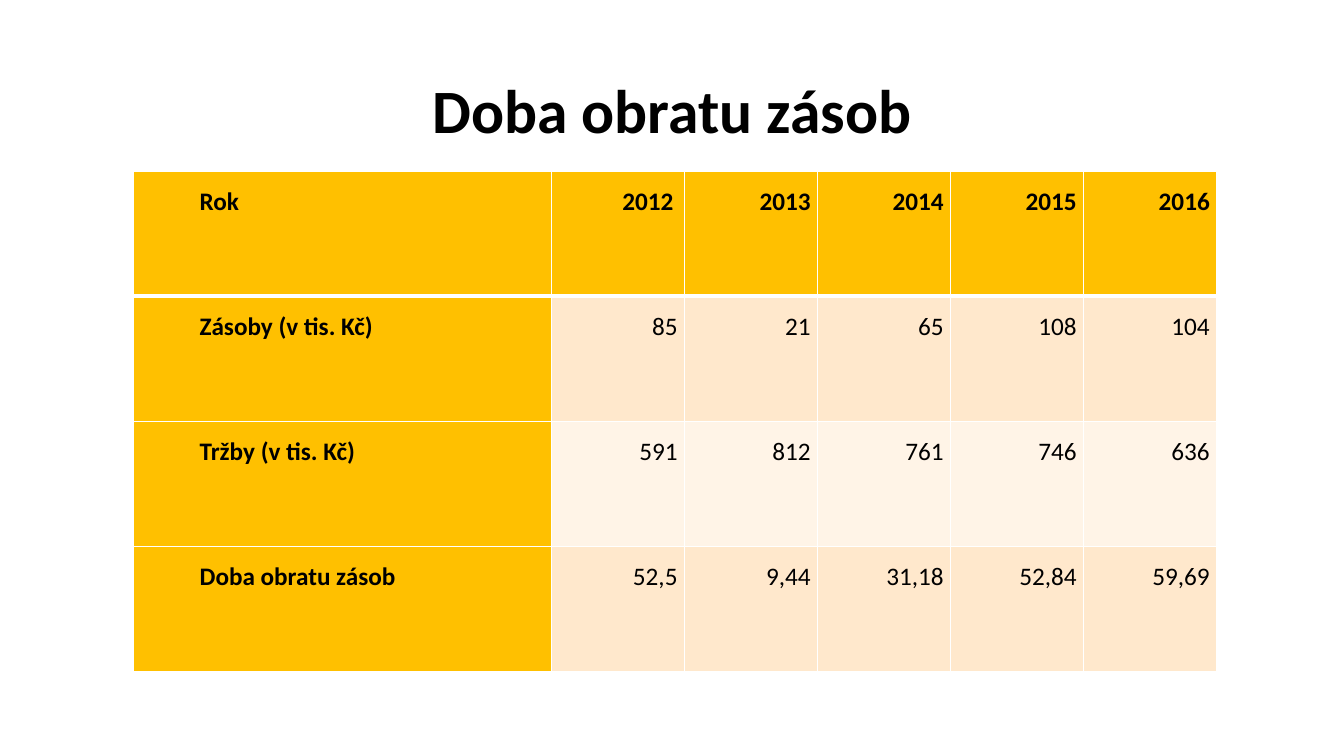
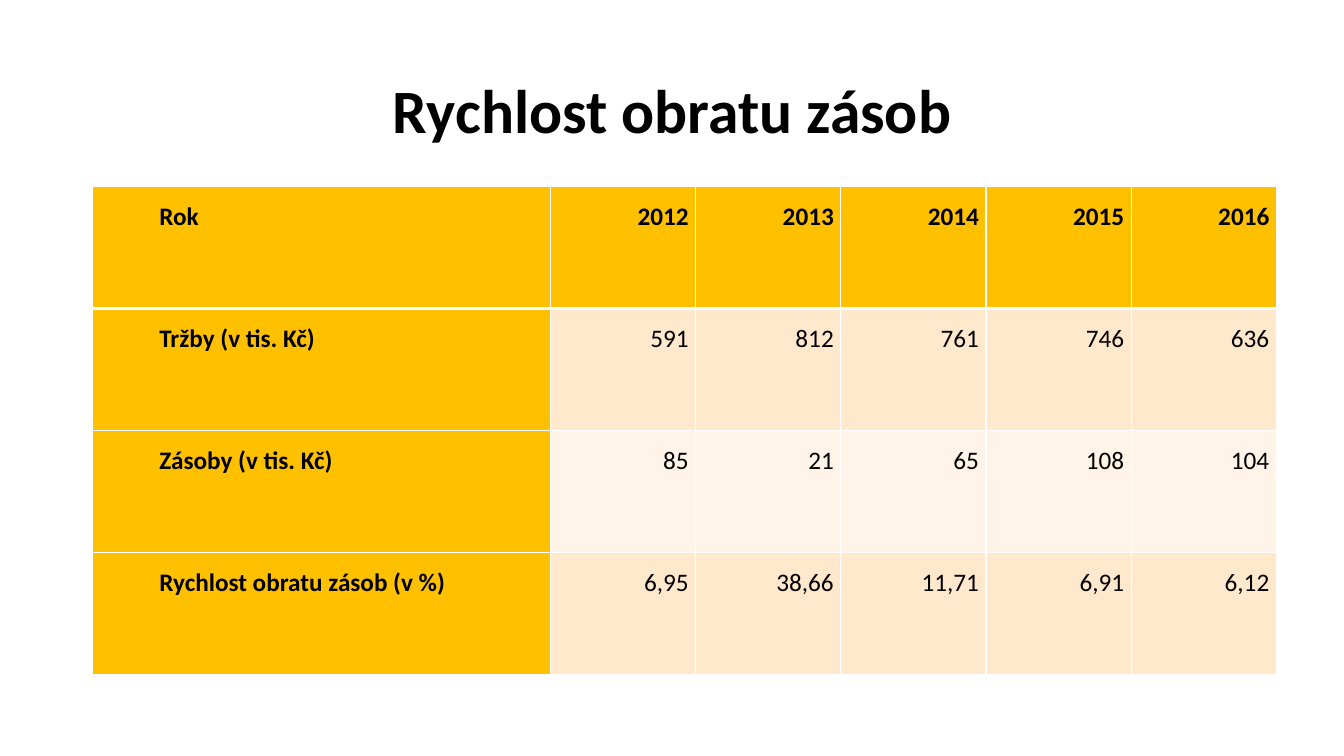
from lxml import etree
from pptx import Presentation
from pptx import util as u
from pptx.dml.color import RGBColor
from pptx.enum import text
from pptx.oxml import ns

LEFT, CENTER, RIGHT = text.PP_ALIGN.LEFT, text.PP_ALIGN.CENTER, text.PP_ALIGN.RIGHT
YEARS = ["Rok", "2012", "2013", "2014", "2015", "2016"]
STOCK = ["Zásoby (v tis. Kč)", "85", "21", "65", "108", "104"]
SALES = ["Tržby (v tis. Kč)", "591", "812", "761", "746", "636"]
TURNOVER_DAYS = ["Doba obratu zásob", "52,5", "9,44", "31,18", "52,84", "59,69"]
TURNOVER_RATE = ["Rychlost obratu zásob (v %)", "6,95", "38,66", "11,71", "6,91", "6,12"]


def rgb(value):
    return RGBColor.from_string(value)


class Deck:
    FONT = "Calibri"
    INK = "000000"
    GRID = "FFFFFF"
    HEAD = "FFC000"
    BANDS = ("FFF4E7", "FFE8CC")

    def __init__(self):
        self.prs = Presentation()
        self.prs.slide_width = u.Inches(13.33)
        self.prs.slide_height = u.Inches(7.5)
        self.s = None

    def slide(self, title):
        self.s = self.prs.slides.add_slide(self.prs.slide_layouts[5])
        sp = self.s.shapes.title
        sp.left, sp.top = u.Inches(0.92), u.Inches(0.4)
        sp.width, sp.height = u.Inches(11.5), u.Inches(1.45)
        tf = sp.text_frame
        tf.word_wrap = True
        tf.auto_size = text.MSO_AUTO_SIZE.NONE
        tf.vertical_anchor = text.MSO_ANCHOR.MIDDLE
        self.paragraph(tf, title, 44, True, CENTER, 0.9)

    def paragraph(self, tf, words, size, bold, align, spacing):
        p = tf.paragraphs[0]
        p.alignment = align
        p.line_spacing = spacing
        r = p.add_run()
        r.text = words
        r.font.name = self.FONT
        r.font.size = u.Pt(size)
        r.font.bold = bold
        r.font.color.rgb = rgb(self.INK)
        return p

    def borders(self, cell, top, bottom):
        tc_pr = cell._tc.get_or_add_tcPr()
        sides = (("lnL", 1), ("lnR", 1), ("lnT", top), ("lnB", bottom))
        for i, (side, width) in enumerate(sides):
            ln = etree.Element(ns.qn(f"a:{side}"), w=str(u.Pt(width)))
            fill = etree.SubElement(ln, ns.qn("a:solidFill"))
            etree.SubElement(fill, ns.qn("a:srgbClr"), val=self.GRID)
            tc_pr.insert(i, ln)

    def cell(self, cell, words, row, col, align):
        head = row == 0 or col == 0
        cell.margin_left = cell.margin_right = u.Inches(0.07)
        cell.margin_top = cell.margin_bottom = 0
        cell.fill.solid()
        cell.fill.fore_color.rgb = rgb(self.HEAD if head else self.BANDS[row % 2])
        self.borders(cell, 3 if row == 1 else 1, 3 if row == 0 else 1)
        p = self.paragraph(cell.text_frame, words, 18, head, align, 1.5)
        p_pr = p._p.get_or_add_pPr()
        p_pr.set("marL", "0")
        p_pr.set("indent", str(u.Inches(0.59)))

    def table(self, left, top, label_width, value_width, row_height, rows, centered=()):
        cols = len(rows[0])
        width = label_width + value_width * (cols - 1)
        frame = self.s.shapes.add_table(
            len(rows), cols, u.Inches(left), u.Inches(top),
            u.Inches(width), u.Inches(row_height * len(rows)))
        table = frame.table
        for col, column in enumerate(table.columns):
            column.width = u.Inches(value_width if col else label_width)
        for row, values in enumerate(rows):
            table.rows[row].height = u.Inches(row_height)
            for col, words in enumerate(values):
                align = CENTER if (row, col) in centered else RIGHT if col else LEFT
                self.cell(table.cell(row, col), words, row, col, align)


def main():
    deck = Deck()
    deck.slide("Doba obratu zásob")
    deck.table(1.32, 1.7, 4.15, 1.32, 1.24,
               [YEARS, STOCK, SALES, TURNOVER_DAYS], centered={(0, 1)})
    deck.slide("Rychlost obratu zásob")
    deck.table(0.92, 1.85, 4.54, 1.44, 1.21,
               [YEARS, SALES, STOCK, TURNOVER_RATE])
    deck.prs.save("out.pptx")


if __name__ == "__main__":
    main()
